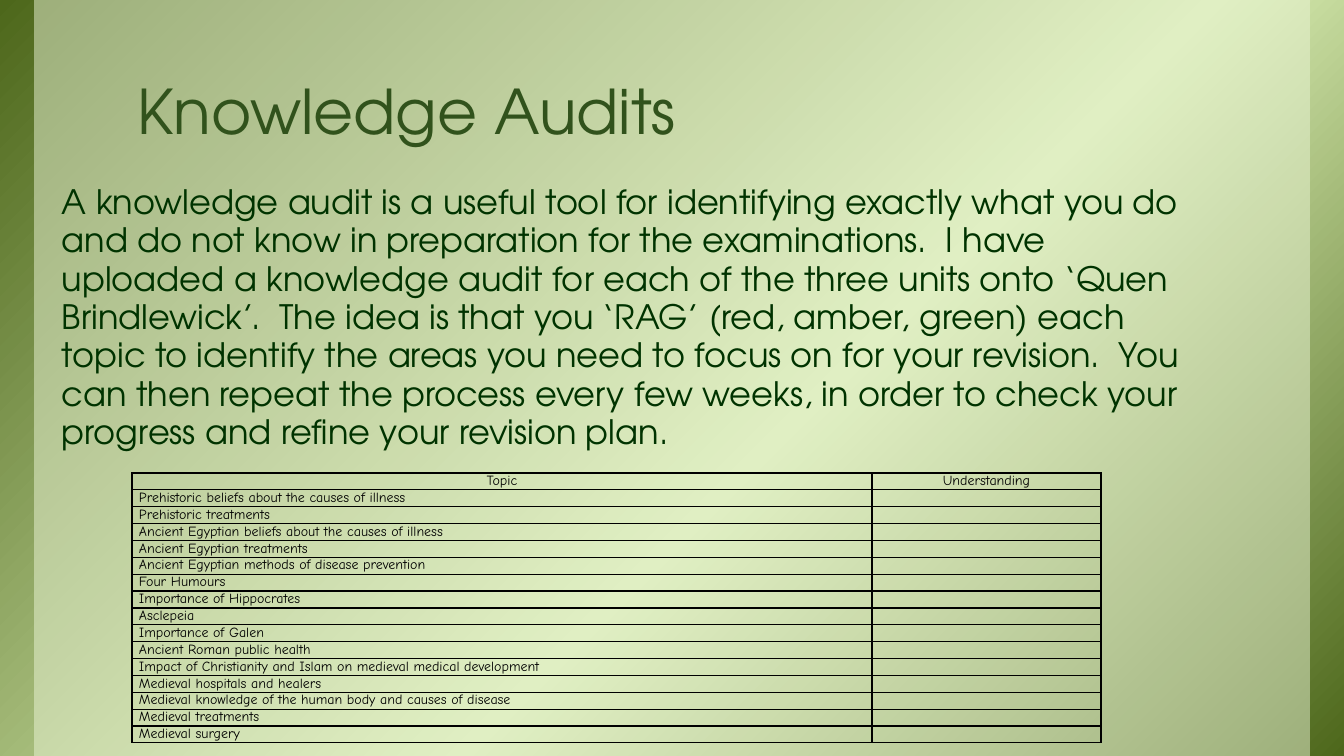
from dataclasses import dataclass

from lxml import etree
from pptx import Presentation
from pptx import util as u
from pptx.dml.color import RGBColor
from pptx.enum import shapes, text
from pptx.oxml import parse_xml
from pptx.oxml.ns import nsdecls, qn

EMU_PER_PX = 12192000 / 1344
HEADING_FONT = "TeX Gyre Adventor"
TABLE_FONT = "Comic Neue"
TABLE_PT = 10

INTRO = (
    "A knowledge audit is a useful tool for identifying exactly what you do and do not know "
    "in preparation for the examinations.  I have uploaded a knowledge audit for each of the "
    "three units onto ‘Quen Brindlewick’.  The idea is that you ‘RAG’ (red, amber, green) each "
    "topic to identify the areas you need to focus on for your revision.  You can then repeat "
    "the process every few weeks, in order to check your progress and refine your revision plan."
)
HEADERS = ("Topic", "Understanding")
TOPICS = (
    "Prehistoric beliefs about the causes of illness",
    "Prehistoric treatments",
    "Ancient Egyptian beliefs about the causes of illness",
    "Ancient Egyptian treatments",
    "Ancient Egyptian methods of disease prevention",
    "Four Humours",
    "Importance of Hippocrates",
    "Asclepeia",
    "Importance of Galen",
    "Ancient Roman public health",
    "Impact of Christianity and Islam on medieval medical development",
    "Medieval hospitals and healers",
    "Medieval knowledge of the human body and causes of disease",
    "Medieval treatments",
    "Medieval surgery",
)


@dataclass(frozen=True)
class Box:
    left: int
    top: int
    width: int
    height: int

    def emu(self) -> tuple:
        return tuple(px(v) for v in (self.left, self.top, self.width, self.height))


@dataclass(frozen=True)
class Panel:
    box: Box
    fill_xml: str


def px(n: int) -> int:
    return u.Emu(round(n * EMU_PER_PX))


def rgb(code: str) -> RGBColor:
    return RGBColor.from_string(code)


def gradient(stops: tuple, angle: int) -> str:
    gs = "".join(f'<a:gs pos="{pos * 1000}"><a:srgbClr val="{c}"/></a:gs>' for pos, c in stops)
    return (f'<a:gradFill {nsdecls("a")} rotWithShape="1"><a:gsLst>{gs}</a:gsLst>'
            f'<a:lin ang="{angle * 60000}" scaled="0"/></a:gradFill>')


def translucent(color: str, alpha: int) -> str:
    return (f'<a:solidFill {nsdecls("a")}><a:srgbClr val="{color}">'
            f'<a:alpha val="{alpha * 1000}"/></a:srgbClr></a:solidFill>')


PANELS = (
    Panel(Box(0, 0, 1344, 756), gradient(((0, "4D671B"), (58, "D6EAAF"), (100, "4D671B")), 45)),
    Panel(Box(34, 0, 1276, 756), translucent("EBF5D7", 50)),
)


def add_panel(slide, panel: Panel, depth: int) -> None:
    sp = slide.shapes.add_shape(shapes.MSO_SHAPE.RECTANGLE, *panel.box.emu())
    sp.shadow.inherit = False
    sp.line.fill.background()
    sp._element.spPr.find(qn("a:prstGeom")).addnext(parse_xml(panel.fill_xml))
    slide.shapes._spTree.insert(2 + depth, sp._element)  # keep behind the title


def format_paragraph(p, size: int, font: str, color: str, spacing: float = 1.0) -> None:
    p.line_spacing = spacing
    p.space_before = u.Pt(0)
    for r in p.runs:
        r.font.size = u.Pt(size)
        r.font.name = font
        r.font.color.rgb = rgb(color)


def set_title(slide, box: Box, title: str) -> None:
    sp = slide.shapes.title
    sp.left, sp.top, sp.width, sp.height = box.emu()
    tf = sp.text_frame
    tf.text = title
    tf.word_wrap = True
    tf.auto_size = text.MSO_AUTO_SIZE.NONE
    tf.vertical_anchor = text.MSO_ANCHOR.BOTTOM
    tf.margin_left = tf.margin_right = px(13)
    tf.margin_top = tf.margin_bottom = px(7)
    p = tf.paragraphs[0]
    p.alignment = text.PP_ALIGN.LEFT
    format_paragraph(p, 44, HEADING_FONT, "31521C", 0.85)


def add_intro(slide, box: Box) -> None:
    tf = slide.shapes.add_textbox(*box.emu()).text_frame
    tf.text = INTRO
    tf.word_wrap = True
    tf.auto_size = text.MSO_AUTO_SIZE.SHAPE_TO_FIT_TEXT
    format_paragraph(tf.paragraphs[0], 24, HEADING_FONT, "003300", 0.95)


def add_borders(cell) -> None:
    tc_pr = cell._tc.get_or_add_tcPr()
    for i, side in enumerate(("lnL", "lnR", "lnT", "lnB")):
        tc_pr.insert(i, parse_xml(
            f'<a:{side} {nsdecls("a")} w="12700"><a:solidFill><a:srgbClr val="000000"/>'
            f'</a:solidFill></a:{side}>'))


def fill_cell(cell, label: str, centred: bool) -> None:
    cell.text = label
    cell.margin_left = cell.margin_right = px(7)
    cell.margin_top = cell.margin_bottom = 0
    cell.fill.background()
    add_borders(cell)
    p = cell.text_frame.paragraphs[0]
    p.alignment = text.PP_ALIGN.CENTER if centred else text.PP_ALIGN.LEFT
    format_paragraph(p, TABLE_PT, TABLE_FONT, "000000")
    if not label:  # an empty cell must not stretch its row
        end = etree.SubElement(p._p, qn("a:endParaRPr"), sz=str(TABLE_PT * 100))
        etree.SubElement(end, qn("a:latin"), typeface=TABLE_FONT)


def add_audit_table(slide, box: Box, col_widths: tuple) -> None:
    rows = [HEADERS] + [(topic, "") for topic in TOPICS]
    table = slide.shapes.add_table(len(rows), len(HEADERS), *box.emu()).table
    table.first_row = table.horz_banding = False
    for col, width in zip(table.columns, col_widths):
        col.width = px(width)
    for i, labels in enumerate(rows):
        table.rows[i].height = px(box.height) // len(rows)
        for j, label in enumerate(labels):
            fill_cell(table.cell(i, j), label, centred=i == 0)


def main() -> None:
    prs = Presentation()
    prs.slide_width, prs.slide_height = px(1344), px(756)
    slide = prs.slides.add_slide(prs.slide_layouts[5])

    # Backdrop
    for depth, panel in enumerate(PANELS):
        add_panel(slide, panel, depth)

    # Heading and explanation
    set_title(slide, Box(124, 0, 1120, 154), "Knowledge Audits")
    add_intro(slide, Box(52, 179, 1166, 281))

    # Audit checklist
    add_audit_table(slide, Box(132, 473, 969, 269), (740, 229))

    prs.save("out.pptx")


if __name__ == "__main__":
    main()
